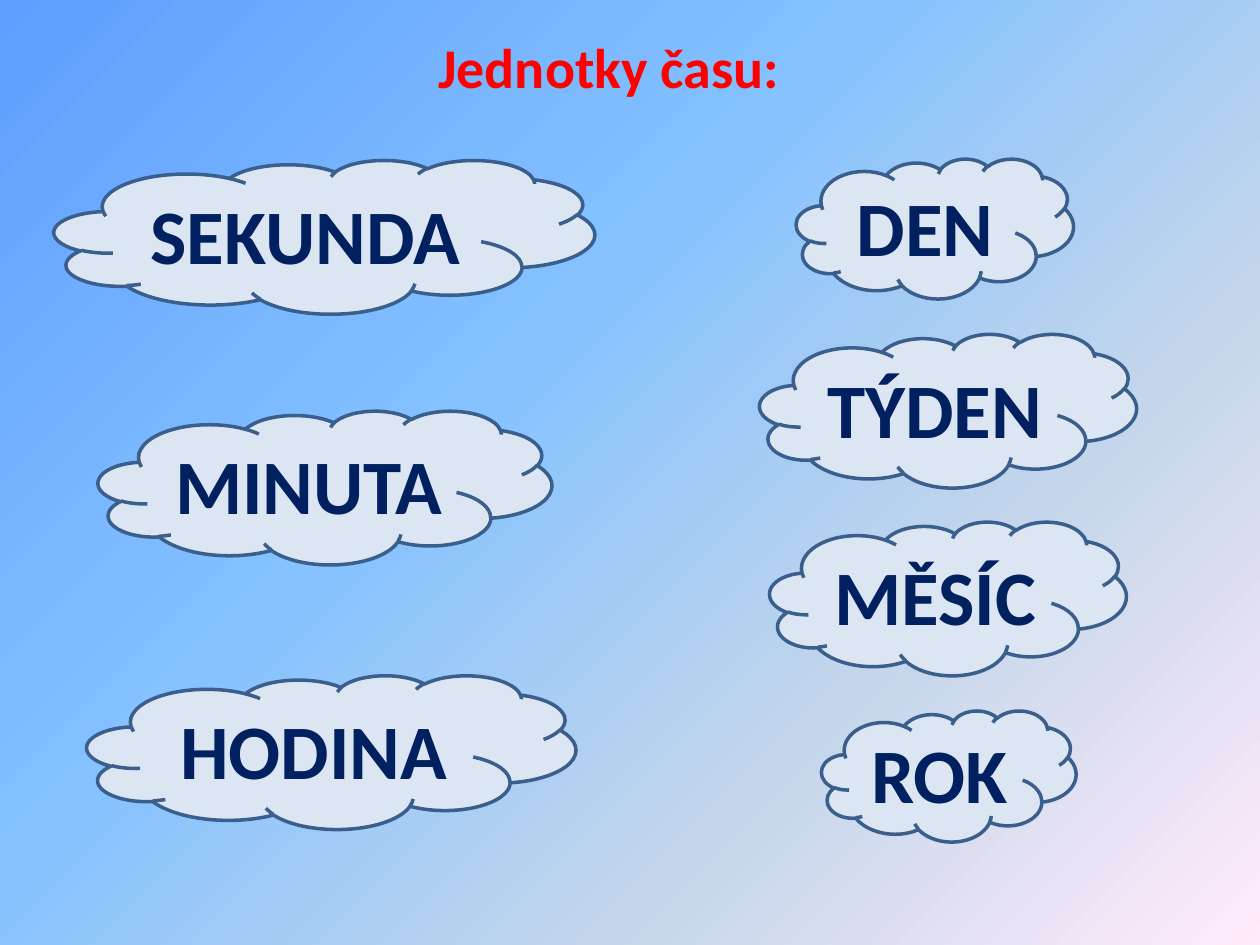
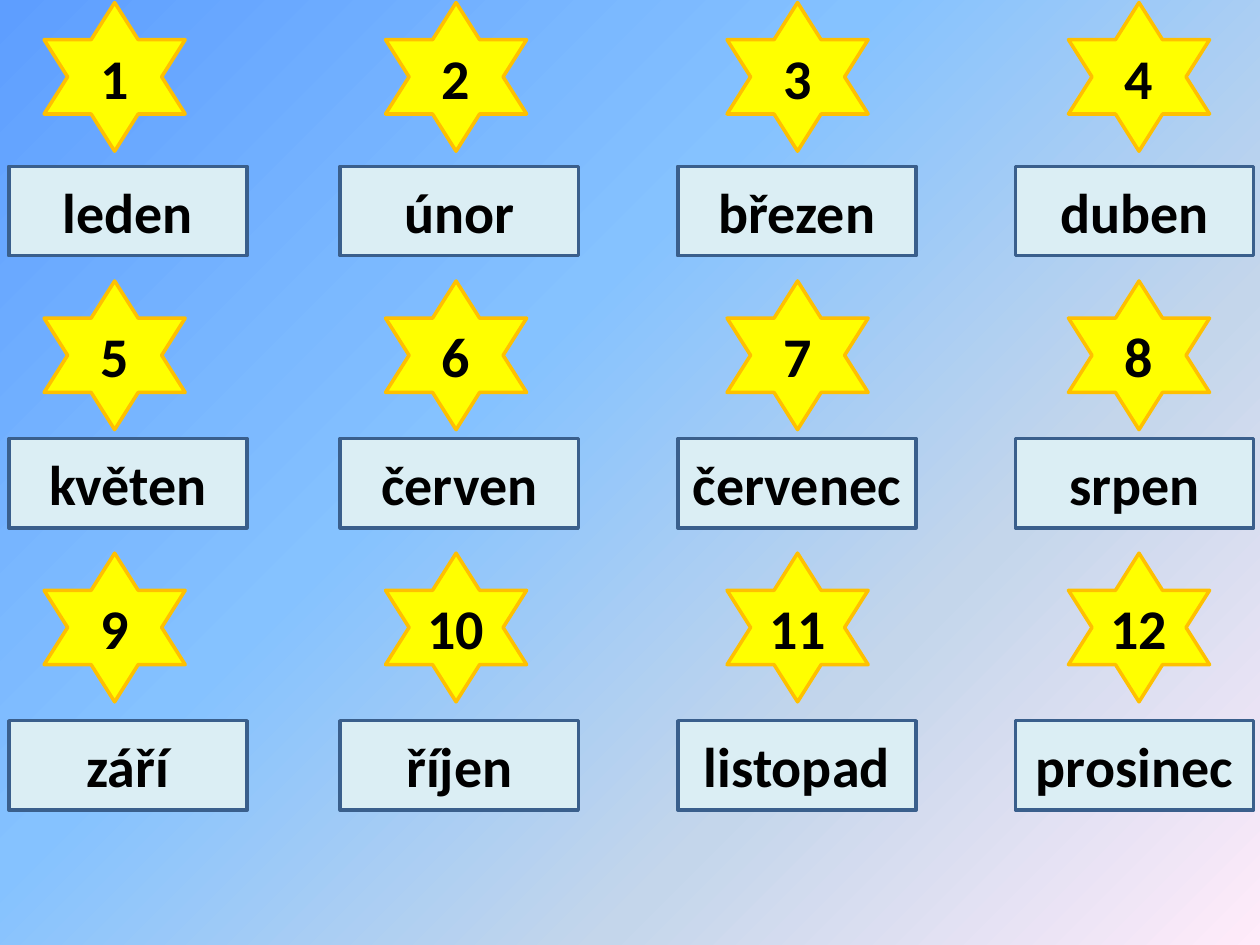
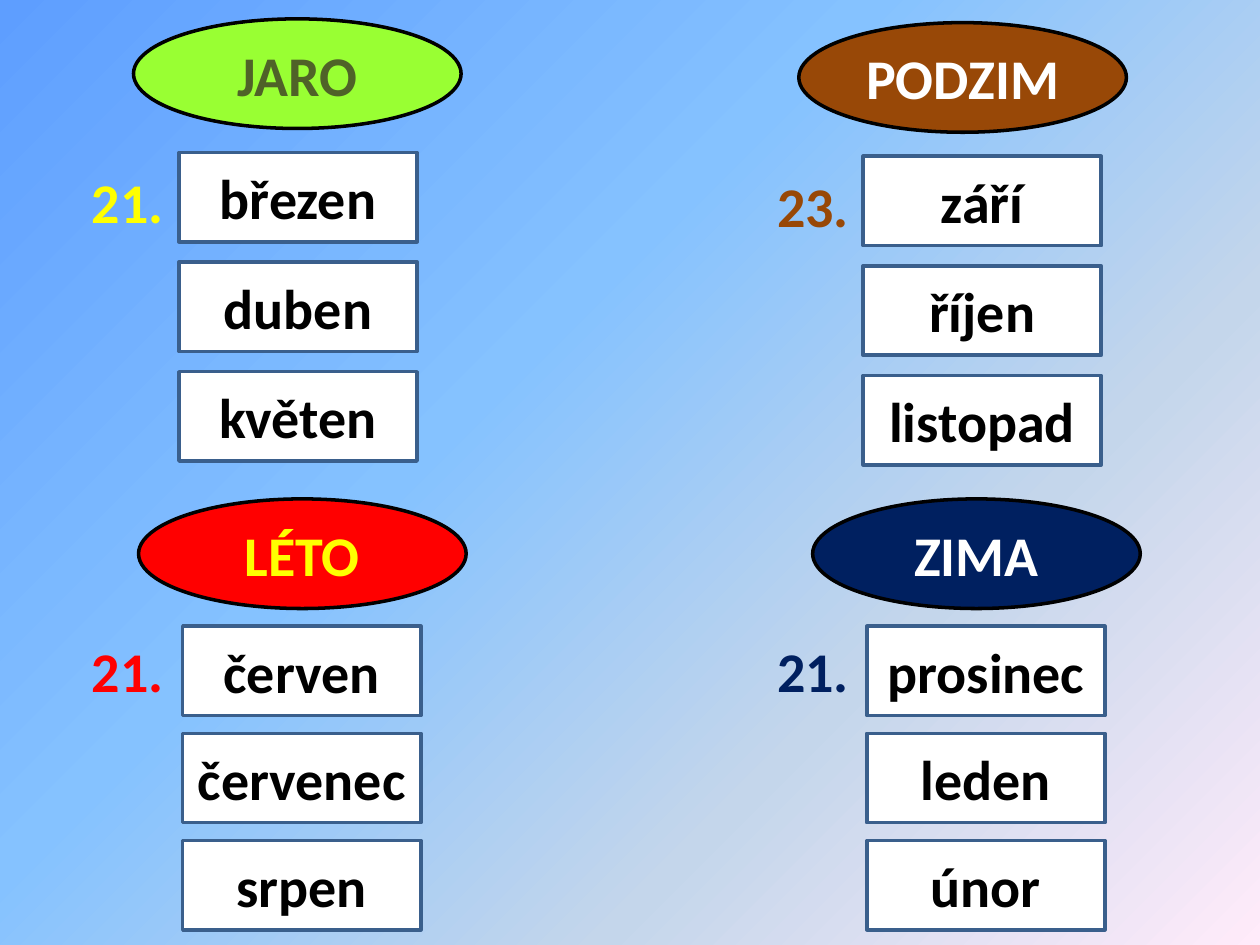
from dataclasses import dataclass

from pptx import Presentation
from pptx.dml.color import RGBColor
from pptx.enum.shapes import MSO_SHAPE
from pptx.enum.text import MSO_ANCHOR, MSO_AUTO_SIZE, PP_ALIGN
from pptx.oxml import parse_xml
from pptx.oxml.ns import nsdecls
from pptx.util import Inches, Pt

FONT = "Calibri"
BLACK, WHITE, RED, YELLOW = "000000", "FFFFFF", "FF0000", "FFFF00"
NAVY, BROWN = "002060", "984807"
OUTLINE, GOLD = "3A5F8C", "FFC000"
CLOUD_FILL, TILE_FILL = "DCE6F2", "DBEEF4"
SKY_STOPS = [(0, "5E9EFF"), (40, "85C2FF"), (70, "C4D6EB"), (100, "FFEBFA")]

MONTHS = ["leden", "únor", "březen", "duben", "květen", "červen",
          "červenec", "srpen", "září", "říjen", "listopad", "prosinec"]
TILE_SIZE = (1.89, 0.71)
STAR_SIZE = (1.12, 1.18)
OVAL_SIZE = (2.6, 0.87)

UNIT_CLOUDS = [
    ("SEKUNDA", (0.43, 1.27, 4.29, 1.22)),
    ("MINUTA", (0.78, 3.26, 3.6, 1.22)),
    ("HODINA", (0.69, 5.36, 3.88, 1.22)),
    ("DEN", (6.32, 1.26, 2.2, 1.11)),
    ("TÝDEN", (6.03, 2.65, 2.99, 1.22)),
    ("MĚSÍC", (6.11, 4.14, 2.83, 1.22)),
    ("ROK", (6.52, 5.64, 2.02, 1.04)),
]


@dataclass
class Season:
    """A season's texts and colours; the indents are measured from its left edge."""
    name: str
    fill: str
    name_color: str
    start_day: str
    day_color: str
    first_month: int
    oval_indent: float
    month_indent: float


SPRING = Season("JARO", "99FF33", "4F6228", "21.", YELLOW, 3, 0.43, 0.79)
SUMMER = Season("LÉTO", RED, YELLOW, "21.", RED, 6, 0.47, 0.82)
AUTUMN = Season("PODZIM", BROWN, WHITE, "23.", BROWN, 9, 0.27, 0.78)
WINTER = Season("ZIMA", NAVY, WHITE, "21.", NAVY, 12, 0.38, 0.81)


def rgb(value):
    return RGBColor.from_string(value)


def add_sky_slide(prs):
    """Add a blank slide with the diagonal blue to pink background."""
    slide = prs.slides.add_slide(prs.slide_layouts[6])
    stops = "".join(
        f'<a:gs pos="{percent * 1000}"><a:srgbClr val="{color}"/></a:gs>'
        for percent, color in SKY_STOPS)
    background = parse_xml(
        f'<p:bg {nsdecls("p", "a")}><p:bgPr><a:gradFill rotWithShape="1">'
        f'<a:gsLst>{stops}</a:gsLst><a:lin ang="2700000" scaled="0"/>'
        '</a:gradFill><a:effectLst/></p:bgPr></p:bg>')
    slide.element.cSld.insert(0, background)
    return slide


def write(frame, text, size, color):
    """Set the only paragraph of a frame in bold and return it."""
    frame.text = text
    paragraph = frame.paragraphs[0]
    font = paragraph.runs[0].font
    font.name, font.size, font.bold = FONT, Pt(size), True
    font.color.rgb = rgb(color)
    return paragraph


def add_label(slide, text, box, color):
    frame = slide.shapes.add_textbox(*map(Inches, box)).text_frame
    frame.word_wrap = False
    frame.auto_size = MSO_AUTO_SIZE.SHAPE_TO_FIT_TEXT
    write(frame, text, 32, color)


def add_card(slide, preset, text, box, fill, line=OUTLINE, color=BLACK, size=32):
    """Add a filled preset shape with centred text."""
    card = slide.shapes.add_shape(preset, *map(Inches, box))
    card.shadow.inherit = False
    card.fill.solid()
    card.fill.fore_color.rgb = rgb(fill)
    card.line.color.rgb = rgb(line)
    card.line.width = Pt(2)
    frame = card.text_frame
    frame.word_wrap = True
    frame.vertical_anchor = MSO_ANCHOR.MIDDLE
    write(frame, text, size, color).alignment = PP_ALIGN.CENTER


def build_units(prs):
    slide = add_sky_slide(prs)
    add_label(slide, "Jednotky času:", (3.38, 0.21, 2.93, 0.64), RED)
    for unit, box in UNIT_CLOUDS:
        add_card(slide, MSO_SHAPE.CLOUD, unit, box, CLOUD_FILL, color=NAVY, size=44)


def build_months(prs):
    slide = add_sky_slide(prs)
    tile_lefts = (0.07, 2.7, 5.38, 8.06)
    star_tops = (0.02, 2.23, 4.39)
    tile_tops = (1.32, 3.48, 5.72)
    for index, month in enumerate(MONTHS):
        row, column = divmod(index, 4)
        star_left = 0.35 + column * 2.71
        add_card(slide, MSO_SHAPE.STAR_6_POINT, str(index + 1),
                 (star_left, star_tops[row], *STAR_SIZE), YELLOW, GOLD)
        add_card(slide, MSO_SHAPE.RECTANGLE, month,
                 (tile_lefts[column], tile_tops[row], *TILE_SIZE), TILE_FILL)


def add_season(slide, season, left, top, months_drop, month_pitch, day_drop):
    """Add the season's oval, its start day and its three months below."""
    month_left = left + season.month_indent
    for step in range(3):
        month = MONTHS[(season.first_month - 1 + step) % 12]
        month_top = top + months_drop + step * month_pitch
        add_card(slide, MSO_SHAPE.RECTANGLE, month,
                 (month_left, month_top, *TILE_SIZE), WHITE)
    add_card(slide, MSO_SHAPE.OVAL, season.name,
             (left + season.oval_indent, top, *OVAL_SIZE),
             season.fill, BLACK, season.name_color)
    add_label(slide, season.start_day, (left, top + day_drop, 0.77, 0.64),
              season.day_color)


def build_seasons(prs):
    slide = add_sky_slide(prs)
    left_column, right_column = 0.63, 6.07
    upper_spacing = (1.06, 0.87, 1.13)
    lower_spacing = (1.01, 0.85, 1.04)
    add_season(slide, SPRING, left_column, 0.15, *upper_spacing)
    add_season(slide, AUTUMN, right_column, 0.18, *upper_spacing)
    add_season(slide, SUMMER, left_column, 3.96, *lower_spacing)
    add_season(slide, WINTER, right_column, 3.96, *lower_spacing)


def main():
    prs = Presentation()
    prs.slide_width, prs.slide_height = Inches(10), Inches(7.5)
    build_units(prs)
    build_months(prs)
    build_seasons(prs)
    prs.save("out.pptx")


if __name__ == "__main__":
    main()
